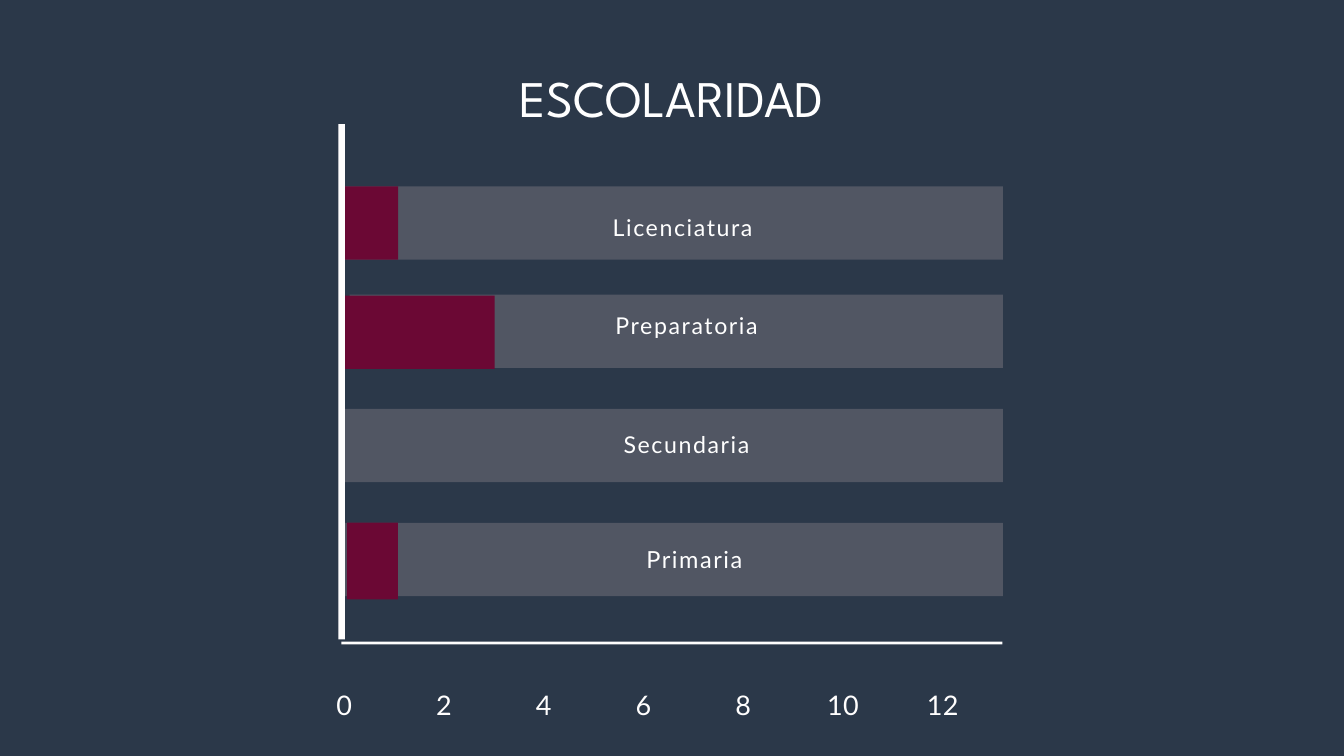
"""Build the ESCOLARIDAD slide: four horizontal bars over a numbered axis."""
from lxml import etree
from pptx import Presentation
from pptx import util as u
from pptx.dml.color import RGBColor
from pptx.enum import shapes, text
from pptx.oxml.ns import qn

NAVY, ROSE, WINE, WHITE, AXIS = "2B3849", "D3BABD", "6B0834", "FFFFFF", "FFFEFE"
LEFT, ALIGN = text.PP_ALIGN.LEFT, text.PP_ALIGN.CENTER

TITLE = ("ESCOLARIDAD", (6.32, 2.11, 38.15, 2.57))
BAR_RIGHT, BAR_HEIGHT = 37.91, 2.77
TRACKS = [(12.92, 7.05), (13.22, 11.14), (12.92, 15.46), (12.92, 19.77)]
VALUES = [
    (12.92, 7.05, 2.13, BAR_HEIGHT),
    (12.98, 11.18, 5.72, BAR_HEIGHT),
    (13.11, 19.76, 1.93, 2.9),
]
AXES = [(12.79, 4.69, 0.25, 19.48), (12.9, 24.26, 24.99, 0.1)]
LABELS = [
    ("Licenciatura", (23.16, 7.67, 13.08, 1.27), LEFT, 24.8, 41.3),
    ("Preparatoria", (22.5, 11.38, 6.91, 1.3), ALIGN, 24.8, 41.3),
    ("Secundaria", (19.41, 15.85, 13.08, 1.3), ALIGN, 24.8, 41.3),
    ("Primaria", (19.71, 20.19, 13.08, 1.32), ALIGN, 25.2, 42.1),
]
TICKS = ["0", "2", "4", "6", "8", "10", "12"]
TICK_LEFT, TICK_STEP, TICK_TOP, TICK_WIDTH, TICK_HEIGHT = 11.86, 3.77, 25.7, 2.31, 1.4


def paint(fill, color, opacity=100):
    fill.solid()
    fill.fore_color.rgb = RGBColor.from_string(color)
    if opacity < 100:
        tone = fill._xPr.find(".//" + qn("a:srgbClr"))
        etree.SubElement(tone, qn("a:alpha"), val=str(opacity * 1000))


def add_bar(page, place, color, opacity=100):
    bar = page.shapes.add_shape(shapes.MSO_SHAPE.RECTANGLE, *map(u.Cm, place))
    bar.shadow.inherit = False
    bar.line.fill.background()
    paint(bar.fill, color, opacity)


def write(box, words, font, size, leading, color=WHITE, align=ALIGN, spacing=0):
    frame = box.text_frame
    frame.word_wrap = True
    frame.auto_size = text.MSO_AUTO_SIZE.SHAPE_TO_FIT_TEXT
    frame.vertical_anchor = text.MSO_ANCHOR.TOP
    frame.margin_left = frame.margin_top = frame.margin_right = frame.margin_bottom = 0
    para = frame.paragraphs[0]
    para.alignment = align
    para.line_spacing = u.Pt(leading)
    para.space_before = u.Pt(0)
    span = para.add_run()
    span.text = words
    span.font.name = font
    span.font.size = u.Pt(size)
    paint(span.font.fill, color)
    if spacing:
        span.font._element.set("spc", str(round(spacing * 100)))


def add_text(page, words, place, *style, **options):
    write(page.shapes.add_textbox(*map(u.Cm, place)), words, "Lato", *style, **options)


def main():
    deck = Presentation()
    deck.slide_width, deck.slide_height = u.Cm(50.8), u.Cm(28.58)
    page = deck.slides.add_slide(deck.slide_layouts[5])
    paint(page.background.fill, NAVY)

    words, place = TITLE
    title = page.shapes.title
    title.left, title.top, title.width, title.height = map(u.Cm, place)
    write(title, words, "League Spartan", 55, 77)

    for left, top in TRACKS:
        add_bar(page, (left, top, BAR_RIGHT - left, BAR_HEIGHT), ROSE, 23)
    for place in VALUES:
        add_bar(page, place, WINE)
    for place in AXES:
        add_bar(page, place, AXIS)

    for words, place, align, size, leading in LABELS:
        add_text(page, words, place, size, leading, align=align, spacing=1.7)
    for index, words in enumerate(TICKS):
        place = (TICK_LEFT + index * TICK_STEP, TICK_TOP, TICK_WIDTH, TICK_HEIGHT)
        add_text(page, words, place, 28.9, 44.2, color=AXIS, spacing=0.3)

    deck.save("out.pptx")


if __name__ == "__main__":
    main()
